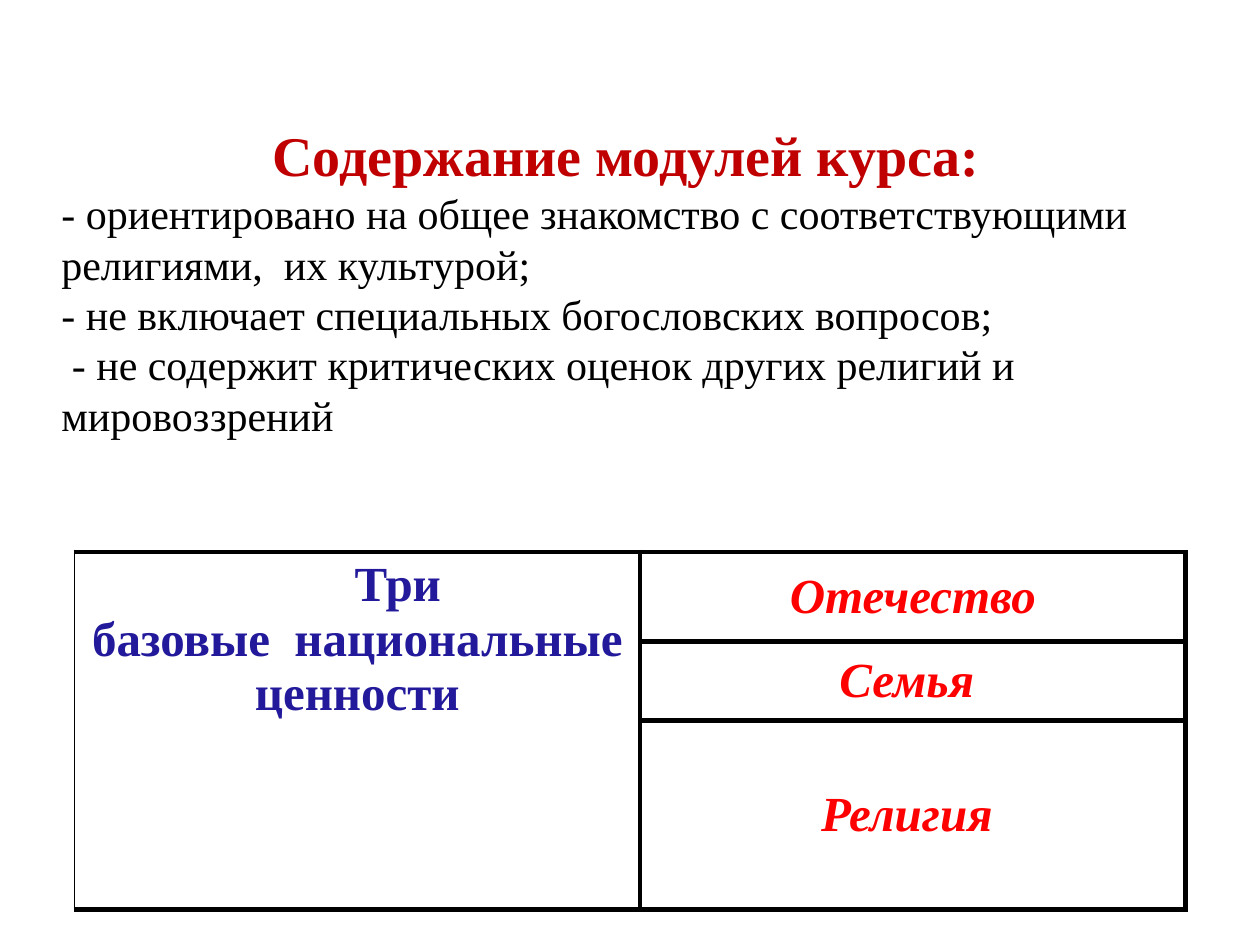
from lxml import etree
from pptx import Presentation
from pptx.dml.color import RGBColor
from pptx.enum import text
from pptx.oxml.ns import qn
from pptx.util import Pt

THEME = {
    "font": "Times New Roman",
    "heading": {"size": 32, "color": "C00000", "bold": True},
    "body": {"size": 24, "color": "000000"},
    "topic": {"size": 28, "color": "22199B", "bold": True},
    "value": {"size": 28, "color": "FF0000", "bold": True, "italic": True},
    "border": "000000",
}
HEADING = "Содержание модулей курса:"
POINTS = [
    "- ориентировано на общее знакомство с соответствующими религиями,  их культурой;",
    "- не включает специальных богословских вопросов;",
    " - не содержит критических оценок других религий и мировоззрений",
]
TOPIC = ["Три", "базовые  национальные ценности"]
VALUES = ["Отечество", "Семья ", "Религия "]

INTRO_BOX = (28, 28, 672.5, 264)
TABLE_ORIGIN = (42.5, 315.4)
COLUMN_WIDTHS = [323.3, 311.7]
ROW_HEIGHTS = [51, 45.4, 100]
HEADING_INDENT = 120.5
TOPIC_INDENT = 153


def style(paragraph, role, align=text.PP_ALIGN.LEFT, indent=0):
    paragraph.alignment = align
    if indent:
        properties = paragraph._p.get_or_add_pPr()
        properties.set("marL", str(Pt(indent)))
        properties.set("indent", "0")
    look = THEME[role]
    for run in paragraph.runs:
        run.font.name = THEME["font"]
        run.font.size = Pt(look["size"])
        run.font.bold = look.get("bold", False)
        run.font.italic = look.get("italic", False)
        run.font.color.rgb = RGBColor.from_string(look["color"])


def set_borders(cell, widths):
    properties = cell._tc.get_or_add_tcPr()
    for position, (side, width) in enumerate(widths.items()):
        line = etree.Element(qn(f"a:ln{side}"), w=str(Pt(width)))
        fill = etree.SubElement(line, qn("a:solidFill"))
        etree.SubElement(fill, qn("a:srgbClr"), val=THEME["border"])
        properties.insert(position, line)


def add_intro(slide):
    frame = slide.shapes.add_textbox(*map(Pt, INTRO_BOX)).text_frame
    frame.word_wrap = True
    frame.vertical_anchor = text.MSO_ANCHOR.MIDDLE
    frame.text = "\n".join([HEADING, *POINTS])
    heading, *points = frame.paragraphs
    style(heading, "heading", indent=HEADING_INDENT)
    for point in points:
        style(point, "body")


def add_values_table(slide):
    size = (sum(COLUMN_WIDTHS), sum(ROW_HEIGHTS))
    table = slide.shapes.add_table(
        len(VALUES), len(COLUMN_WIDTHS), *map(Pt, TABLE_ORIGIN + size)
    ).table
    table.first_row = table.horz_banding = False
    for column, width in zip(table.columns, COLUMN_WIDTHS):
        column.width = Pt(width)
    for row, height in zip(table.rows, ROW_HEIGHTS):
        row.height = Pt(height)

    topic_cell = table.cell(0, 0)
    topic_cell.merge(table.cell(len(VALUES) - 1, 0))
    topic_cell.text_frame.text = "\n".join(TOPIC)
    lead, rest = topic_cell.text_frame.paragraphs
    style(lead, "topic", indent=TOPIC_INDENT)
    style(rest, "topic", text.PP_ALIGN.CENTER)

    for index, value in enumerate(VALUES):
        value_cell = table.cell(index, 1)
        value_cell.text_frame.text = value
        value_cell.vertical_anchor = text.MSO_ANCHOR.MIDDLE
        style(value_cell.text_frame.paragraphs[0], "value", text.PP_ALIGN.CENTER)
        for cell, left in ((table.cell(index, 0), 1), (value_cell, 3)):
            cell.fill.background()
            set_borders(cell, {"L": left, "R": 3, "T": 3, "B": 3})


def main():
    deck = Presentation()
    deck.slide_width, deck.slide_height = Pt(720), Pt(540)
    slide = deck.slides.add_slide(deck.slide_layouts[6])
    add_intro(slide)
    add_values_table(slide)
    deck.save("out.pptx")


if __name__ == "__main__":
    main()
